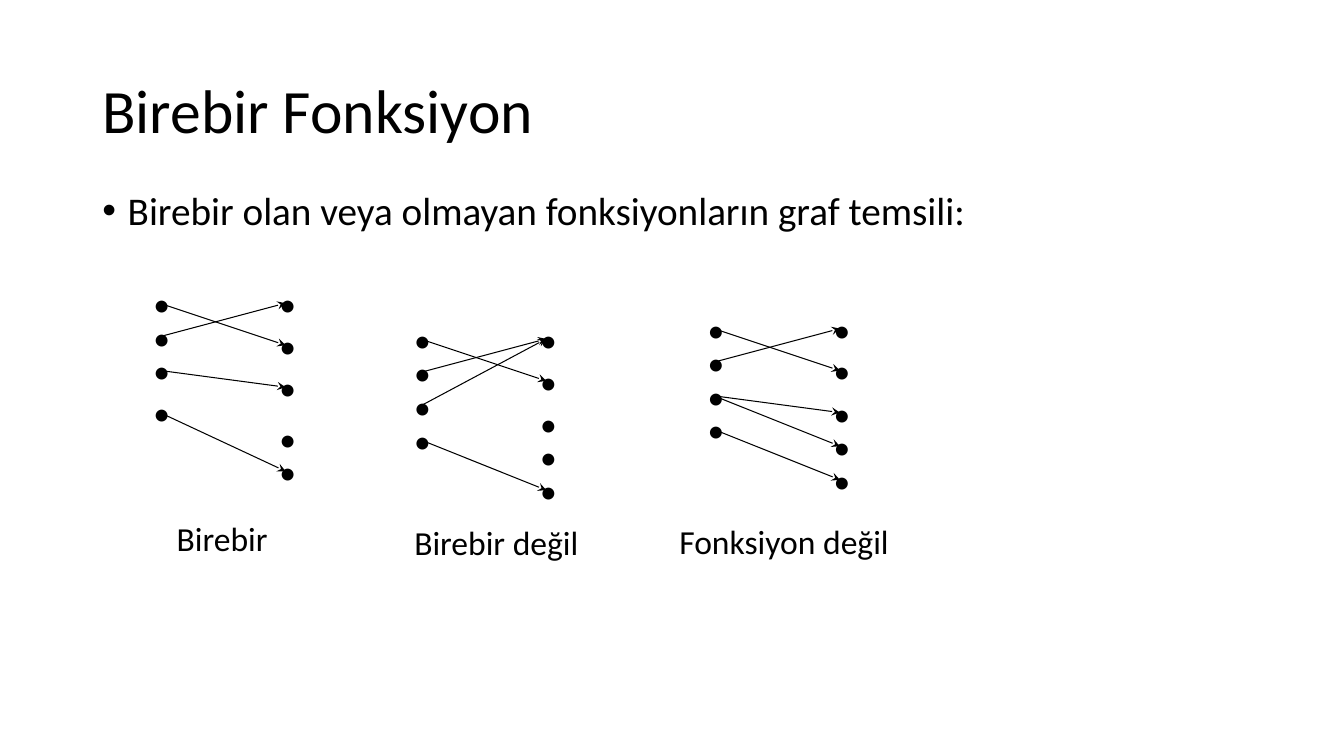
"""Builds the slide on one-to-one functions with three mapping graphs."""
from lxml import etree
from pptx import Presentation
from pptx.dml.color import RGBColor
from pptx.enum.shapes import MSO_CONNECTOR
from pptx.enum.text import MSO_ANCHOR, MSO_AUTO_SIZE, PP_ALIGN
from pptx.oxml.ns import qn
from pptx.util import Cm, Pt

STRAIGHT = MSO_CONNECTOR.STRAIGHT
TOP, MIDDLE = MSO_ANCHOR.TOP, MSO_ANCHOR.MIDDLE
LEFT, CENTER = PP_ALIGN.LEFT, PP_ALIGN.CENTER
FIT_SHAPE, NO_FIT = MSO_AUTO_SIZE.SHAPE_TO_FIT_TEXT, MSO_AUTO_SIZE.NONE

COLORS = {"ink": "000000"}
FONT = "Calibri"
STEP = 2.54 / 12
SPAN = 15 * STEP
DOT_WIDTH, LINE_HEIGHT = 0.81, 1.27

GRAPHS = [
    {"x": 4.02, "y": 7.64, "left": [0, 4, 8, 13], "right": [0, 5, 10, 16, 20],
     "arrows": [(0, 1), (1, 0), (2, 2), (3, 4)],
     "label": "Birebir", "label_box": (4.19, 12.93, 2.82)},
    {"x": 10.59, "y": 8.54, "left": [0, 4, 8, 12], "right": [0, 5, 10, 14, 18],
     "arrows": [(0, 1), (1, 0), (2, 0), (3, 4)],
     "label": "Birebir değil", "label_box": (10.16, 13.03, 4.7)},
    {"x": 17.99, "y": 8.28, "left": [0, 4, 8, 12], "right": [0, 5, 10, 14, 18],
     "arrows": [(0, 1), (1, 0), (2, 3), (3, 4), (2, 2)],
     "label": "Fonksiyon değil", "label_box": (16.84, 13, 5.84)},
]

presentation = Presentation()
presentation.slide_width = Cm(33.87)
presentation.slide_height = Cm(19.05)
slide = presentation.slides.add_slide(presentation.slide_layouts[6])


def add_text(text, left, top, width, height=LINE_HEIGHT, size=24, align=CENTER,
             anchor=MIDDLE, wrap=False, spacing=1.0, before=0):
    shape = slide.shapes.add_textbox(Cm(left), Cm(top), Cm(width), Cm(height))
    frame = shape.text_frame
    frame.word_wrap = wrap
    frame.auto_size = NO_FIT if wrap else FIT_SHAPE
    frame.vertical_anchor = anchor
    paragraph = frame.paragraphs[0]
    paragraph.alignment = align
    paragraph.line_spacing = spacing
    paragraph.space_before = Pt(before)
    run = paragraph.add_run()
    run.text = text
    run.font.name = FONT
    run.font.size = Pt(size)
    run.font.color.rgb = RGBColor.from_string(COLORS["ink"])
    return paragraph


def add_arrow(start_x, start_y, end_x, end_y):
    arrow = slide.shapes.add_connector(
        STRAIGHT, Cm(start_x), Cm(start_y), Cm(end_x), Cm(end_y))
    arrow.line.width = Pt(0.75)
    arrow.line.color.rgb = RGBColor.from_string(COLORS["ink"])
    etree.SubElement(arrow.line._get_or_add_ln(), qn("a:tailEnd"), type="stealth")
    etree.SubElement(arrow._element.spPr, qn("a:effectLst"))


add_text("Birebir Fonksiyon", 2.33, 1.01, 29.21, 3.68, size=44, align=LEFT,
         wrap=True, spacing=0.9)
bullet_line = add_text("Birebir olan veya olmayan fonksiyonların graf temsili:",
                       2.33, 4.7, 29.21, 12.34, size=28, align=LEFT, anchor=TOP,
                       wrap=True, spacing=0.9, before=10)
properties = bullet_line._p.get_or_add_pPr()
properties.set("marL", str(Cm(0.64)))
properties.set("indent", str(-Cm(0.64)))
etree.SubElement(properties, qn("a:buFont"), typeface="Arial")
etree.SubElement(properties, qn("a:buChar"), char="•")

for graph in GRAPHS:
    left_x, right_x = graph["x"], graph["x"] + SPAN
    left_ys = [graph["y"] + STEP * steps for steps in graph["left"]]
    right_ys = [graph["y"] + STEP * steps for steps in graph["right"]]
    for x, ys in ((left_x, left_ys), (right_x, right_ys)):
        for y in ys:
            add_text("•", x - DOT_WIDTH / 2, y - LINE_HEIGHT / 2, DOT_WIDTH)
    for source, target in graph["arrows"]:
        add_arrow(left_x, left_ys[source], right_x, right_ys[target])
    add_text(graph["label"], *graph["label_box"])

presentation.save("out.pptx")
